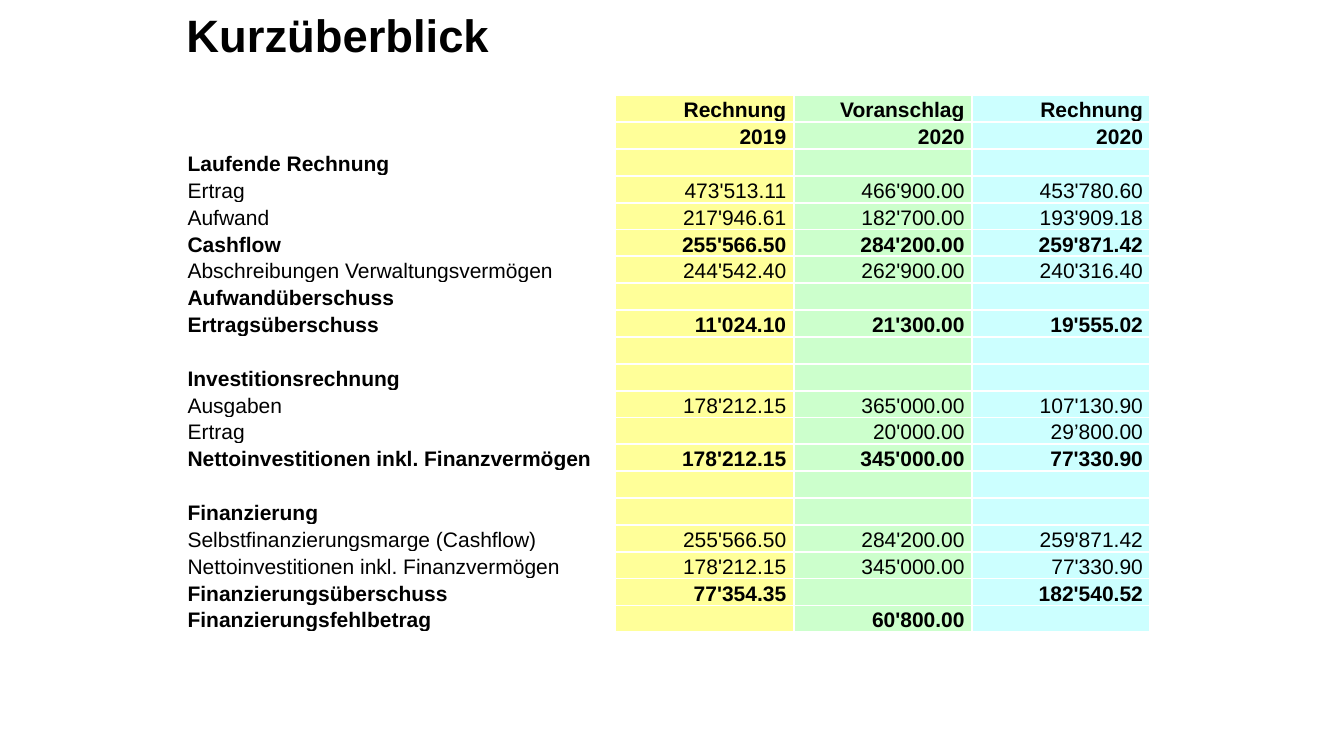
import pptx
import pptx.dml.color
import pptx.enum.text
import pptx.oxml
import pptx.oxml.ns
import pptx.util
from dataclasses import dataclass

Pt = pptx.util.Pt
RGB = pptx.dml.color.RGBColor.from_string
ALIGN = pptx.enum.text.PP_ALIGN
MIDDLE = pptx.enum.text.MSO_ANCHOR.MIDDLE


@dataclass(frozen=True)
class Theme:
    font: str = "Arial"
    ink: str = "000000"
    rule: str = "FFFFFF"
    year_fills: tuple = ("FFFF99", "CCFFCC", "CCFFFF")
    title_size: float = 32.4
    table_size: float = 15


theme = Theme()


def write(frame, text, size, bold=False, align=ALIGN.LEFT, spacing=1.0, after=0):
    paragraph = frame.paragraphs[0]
    paragraph.alignment = align
    paragraph.line_spacing = spacing
    paragraph.space_before = Pt(0)
    paragraph.space_after = Pt(after)
    if not text:
        # An empty cell keeps the row height through its end mark
        end_mark = pptx.oxml.parse_xml(
            f'<a:endParaRPr {pptx.oxml.ns.nsdecls("a")} sz="{int(size * 100)}"/>')
        paragraph._p.append(end_mark)
        return
    run = paragraph.add_run()
    run.text = text
    run.font.name = theme.font
    run.font.size = Pt(size)
    run.font.bold = bold
    run.font.color.rgb = RGB(theme.ink)


def add_borders(cell, color, width):
    for side in ("lnL", "lnR", "lnT", "lnB"):
        cell._tc.get_or_add_tcPr().append(pptx.oxml.parse_xml(
            f'<a:{side} {pptx.oxml.ns.nsdecls("a")} w="{Pt(width)}">'
            f'<a:solidFill><a:srgbClr val="{color}"/></a:solidFill></a:{side}>'))


presentation = pptx.Presentation()
presentation.slide_width = Pt(960)
presentation.slide_height = Pt(540)
slide = presentation.slides.add_slide(presentation.slide_layouts[5])

# Title
title = slide.shapes.title
title.left, title.top, title.width, title.height = Pt(126), Pt(5.76), Pt(802), Pt(42.5)
title.text_frame.auto_size = pptx.enum.text.MSO_AUTO_SIZE.NONE
title.text_frame.vertical_anchor = MIDDLE
write(title.text_frame, "Kurzüberblick", size=theme.title_size, bold=True, spacing=0.9)

# Accounts: bold flag, label, then one value for each year column
accounts = [
    (True, "", "Rechnung", "Voranschlag", "Rechnung"),
    (True, "", "2019", "2020", "2020"),
    (True, "Laufende Rechnung", "", "", ""),
    (False, "Ertrag", "473'513.11", "466'900.00", "453'780.60"),
    (False, "Aufwand", "217'946.61", "182'700.00", "193'909.18"),
    (True, "Cashflow", "255'566.50", "284'200.00", "259'871.42"),
    (False, "Abschreibungen Verwaltungsvermögen", "244'542.40", "262'900.00", "240'316.40"),
    (True, "Aufwandüberschuss", "", "", ""),
    (True, "Ertragsüberschuss", "11'024.10", "21'300.00", "19'555.02"),
    (False, "", "", "", ""),
    (True, "Investitionsrechnung", "", "", ""),
    (False, "Ausgaben", "178'212.15", "365'000.00", "107'130.90"),
    (False, "Ertrag", "", "20'000.00", "29’800.00"),
    (True, "Nettoinvestitionen inkl. Finanzvermögen", "178'212.15", "345'000.00", "77'330.90"),
    (False, "", "", "", ""),
    (True, "Finanzierung", "", "", ""),
    (False, "Selbstfinanzierungsmarge (Cashflow)", "255'566.50", "284'200.00", "259'871.42"),
    (False, "Nettoinvestitionen inkl. Finanzvermögen", "178'212.15", "345'000.00", "77'330.90"),
    (True, "Finanzierungsüberschuss", "77'354.35", "", "182'540.52"),
    (True, "Finanzierungsfehlbetrag", "", "60'800.00", ""),
]

# Table frame
label_width, year_width, row_height = 313.5, 127.4, 19.13
overview = slide.shapes.add_table(
    len(accounts), 4, Pt(126), Pt(68),
    Pt(label_width + 3 * year_width), Pt(row_height * len(accounts))).table
overview.first_row = False
overview.horz_banding = False
for column, width in zip(overview.columns, (label_width, *[year_width] * 3)):
    column.width = Pt(width)

# Table cells
for row, (bold, *entries) in enumerate(accounts):
    overview.rows[row].height = Pt(row_height)
    for column, entry in enumerate(entries):
        is_label = column == 0
        cell = overview.cell(row, column)
        cell.margin_left = cell.margin_right = Pt(8 if is_label else 5.3)
        cell.margin_top = cell.margin_bottom = Pt(0)
        cell.vertical_anchor = MIDDLE
        add_borders(cell, theme.rule, 1.5)
        if is_label:
            cell.fill.background()
        else:
            cell.fill.solid()
            cell.fill.fore_color.rgb = RGB(theme.year_fills[column - 1])
        write(cell.text_frame, entry, size=theme.table_size, bold=bold,
              align=ALIGN.LEFT if is_label else ALIGN.RIGHT, spacing=1.15, after=10)

presentation.save("out.pptx")
